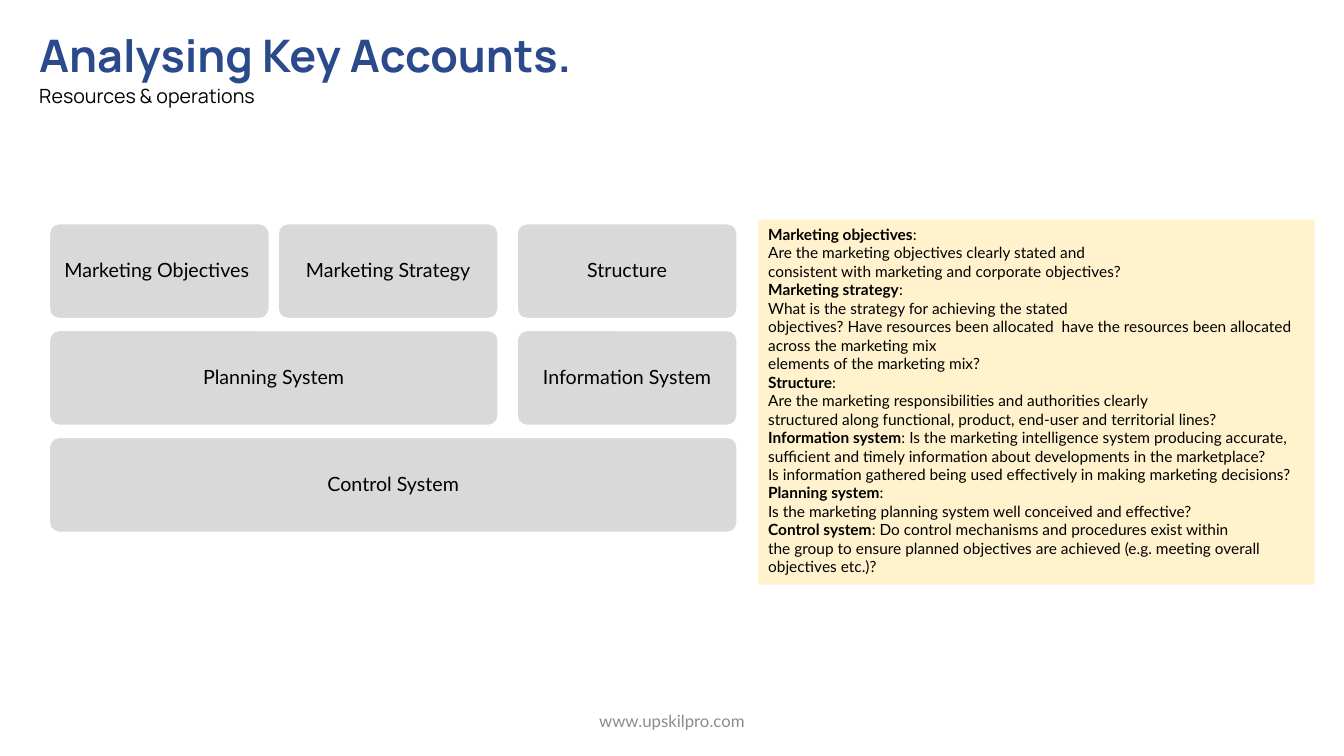
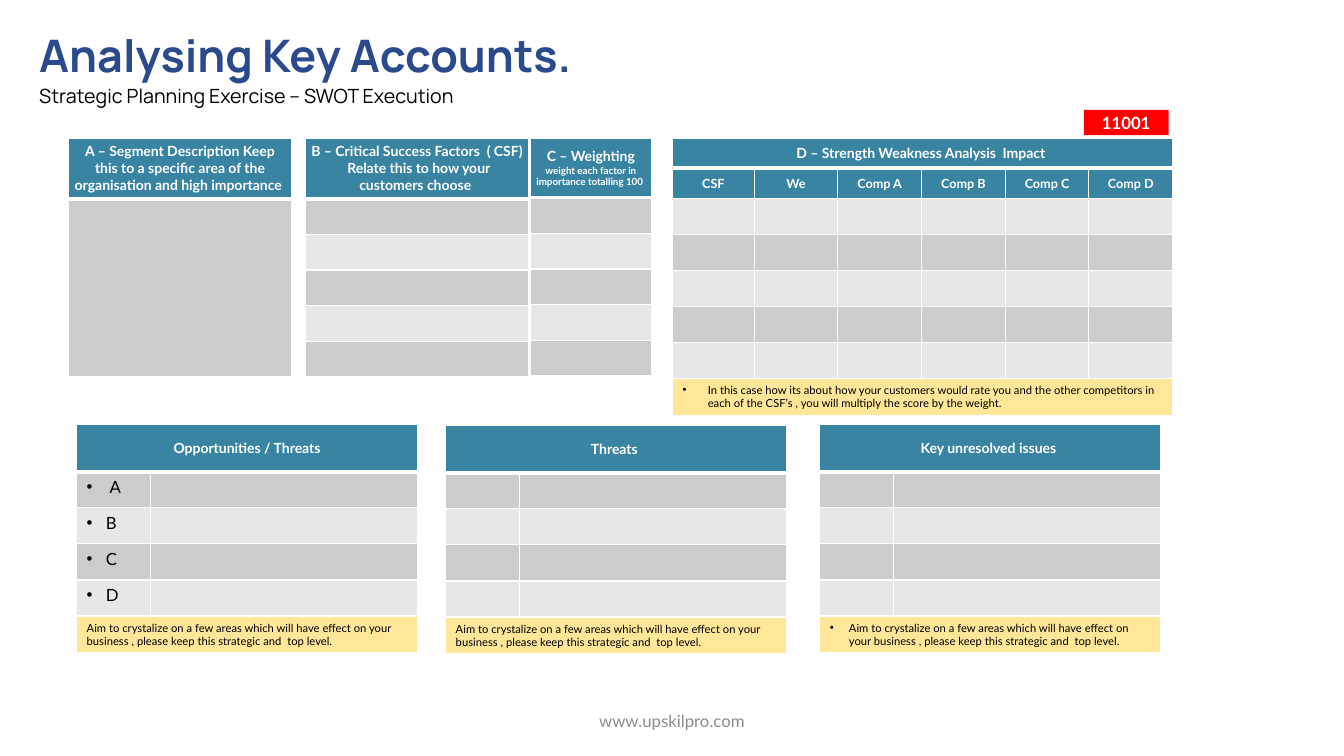
from dataclasses import dataclass

from lxml import etree
from pptx import Presentation
from pptx.dml.color import RGBColor
from pptx.enum.shapes import MSO_SHAPE
from pptx.enum.text import MSO_ANCHOR, PP_ALIGN
from pptx.oxml.ns import qn
from pptx.util import Inches, Pt

RECT, ROUNDED = MSO_SHAPE.RECTANGLE, MSO_SHAPE.ROUNDED_RECTANGLE
LEFT, CENTER = PP_ALIGN.LEFT, PP_ALIGN.CENTER
TOP, MIDDLE = MSO_ANCHOR.TOP, MSO_ANCHOR.MIDDLE

# Shared style
BODY_FONT, TITLE_FONT = "Lato", "Manrope"
BLACK, WHITE, BLUE, FOOTER_GREY = "000000", "FFFFFF", "2A4A8B", "8C8C8C"
TEAL, DARK, PALE, NOTE, RED = "3984A3", "CCCCCC", "E7E7E7", "FFE699", "FF0000"
BOX_GREY, CREAM = "D9D9D9", "FFF2CC"
SLIDE_W, SLIDE_H = 13.33, 7.5

# Grid of the building blocks on the first slide
COL_X = (0.49, 2.76, 5.13)
COL_W = 2.18
ROW_Y, ROW_PITCH, ROW_H = 2.22, 1.06, 0.94


@dataclass(frozen=True)
class Block:
    text: str
    row: int
    col: int
    span: int = 1


@dataclass(frozen=True)
class Panel:
    title: str
    x: float
    y: float
    cols: tuple
    height: float
    head_h: float
    rows: int
    subtitle: str = ""
    heads: tuple = ()
    labels: tuple = ()
    note: str = ""
    note_indent: float = 0
    inset: float = 0.1
    fills: tuple = (DARK, PALE)


BLOCKS = (
    Block("Marketing Objectives ", 0, 0),
    Block("Marketing Strategy", 0, 1),
    Block("Structure", 0, 2),
    Block("Planning System", 1, 0, 2),
    Block("Information System", 1, 2),
    Block("Control System", 2, 0, 3),
)

# Bold lead and plain remainder of each paragraph
QUESTIONS = (
    ("Marketing objectives", ":"),
    ("", "Are the marketing objectives clearly stated and"),
    ("", "consistent with marketing and corporate objectives?"),
    ("Marketing strategy", ":"),
    ("", "What is the strategy for achieving the stated"),
    ("", "objectives? Have resources been allocated  have the resources been "
         "allocated across the marketing mix"),
    ("", "elements of the marketing mix?"),
    ("Structure", ":"),
    ("", "Are the marketing responsibilities and authorities clearly"),
    ("", "structured along functional, product, end-user and territorial lines?"),
    ("Information system", ": Is the marketing intelligence system producing "
     "accurate, sufficient and timely information about developments in the "
     "marketplace?"),
    ("", "Is information gathered being used effectively in making marketing "
         "decisions?"),
    ("Planning system", ":"),
    ("", "Is the marketing planning system well conceived and effective?"),
    ("Control system", ": Do control mechanisms and procedures exist within"),
    ("", "the group to ensure planned objectives are achieved (e.g. meeting "
         "overall"),
    ("", "objectives etc.)?"),
)

AIM = ("Aim to crystalize on a few areas which will have effect on your "
       "business , please keep this strategic and  top level.")
UPPER = dict(y=1.37, head_h=0.6, rows=5)
LOWER = dict(cols=(0.73, 2.65), height=2.26, head_h=0.47, rows=4, note=AIM)
PANELS = (
    Panel("D – Strength Weakness Analysis  Impact ", 6.67, 1.37,
          (0.81,) + (0.83,) * 5, 2.74, 0.3, 5,
          heads=("CSF", "We", "Comp A", "Comp B", "Comp C", "Comp D"),
          note="In this case how its about how your customers would rate you "
               "and the other competitors in each of the CSF’s , you will "
               "multiply the score by the weight.",
          note_indent=0.25, fills=(PALE, DARK)),
    Panel("B – Critical Success Factors  ( CSF)  Relate this to how your "
          "customers choose ", 3.03, cols=(2.21,), height=2.37, inset=0.05,
          **UPPER),
    Panel("A – Segment Description Keep this to a specific area of the "
          "organisation and high importance ", 0.68, cols=(2.21,), height=2.37,
          inset=0.05, **{**UPPER, "rows": 1}),
    Panel("C – Weighting ", 5.26, cols=(1.2,), height=2.36, inset=0.05,
          subtitle="weight each factor in importance totalling 100 ",
          **{**UPPER, "head_h": 0.59}),
    Panel("Opportunities / Threats", 0.76, 4.21, labels=(" A", "B", "C", "D"),
          **LOWER),
    Panel("Threats ", 4.42, 4.22, **LOWER),
    Panel("Key unresolved issues ", 8.13, 4.21, note_indent=0.19, **LOWER),
)


def rgb(color: str) -> RGBColor:
    return RGBColor.from_string(color)


def add_run(p, text: str, *, size: float, color: str = BLACK,
            bold: bool = False, font: str = BODY_FONT, align=LEFT,
            bullet: float = 0) -> None:
    """Append formatted text; bullet is the hanging indent in inches."""
    p.alignment = align
    if bullet:
        pPr = p._p.get_or_add_pPr()
        pPr.set("marL", str(Inches(bullet)))
        pPr.set("indent", str(-Inches(bullet)))
        etree.SubElement(pPr, qn("a:buFont"), typeface="Arial")
        etree.SubElement(pPr, qn("a:buChar"), char="•")
    r = p.add_run()
    r.text = text
    r.font.name, r.font.size, r.font.bold = font, Pt(size), bold
    r.font.color.rgb = rgb(color)


def add_textbox(slide, x: float, y: float, w: float, h: float, anchor=TOP):
    tf = slide.shapes.add_textbox(*map(Inches, (x, y, w, h))).text_frame
    tf.word_wrap, tf.vertical_anchor = True, anchor
    return tf


def add_box(slide, kind, x: float, y: float, w: float, h: float, fill: str,
            line: str = "", anchor=MIDDLE):
    sp = slide.shapes.add_shape(kind, *map(Inches, (x, y, w, h)))
    sp.shadow.inherit = False
    sp.fill.solid()
    sp.fill.fore_color.rgb = rgb(fill)
    if line:
        sp.line.color.rgb = rgb(line)
        sp.line.width = Pt(1)
    else:
        sp.line.fill.background()
    sp.text_frame.word_wrap = True
    sp.text_frame.vertical_anchor = anchor
    return sp


def add_slide(prs, subtitle: str):
    """Blank slide with the shared title and footer."""
    slide = prs.slides.add_slide(prs.slide_layouts[6])
    tf = add_textbox(slide, (SLIDE_W - 4.5) / 2, 6.95, 4.5, 0.4, MIDDLE)
    add_run(tf.paragraphs[0], "www.upskilpro.com", size=12, color=FOOTER_GREY,
            align=CENTER)
    tf = add_textbox(slide, 0.29, 0.23, 7.01, 0.88)
    add_run(tf.paragraphs[0], "Analysing Key Accounts.", size=32, color=BLUE,
            bold=True, font=TITLE_FONT)
    p = tf.add_paragraph()
    p.line_spacing, p.space_after = 1.07, Pt(8)
    add_run(p, subtitle, size=14, font=TITLE_FONT)
    return slide


def add_block(slide, block: Block) -> None:
    x = COL_X[block.col]
    w = COL_X[block.col + block.span - 1] + COL_W - x
    sp = add_box(slide, ROUNDED, x, ROW_Y + block.row * ROW_PITCH, w, ROW_H,
                 BOX_GREY, WHITE)
    sp.adjustments[0] = 0.1
    tf = sp.text_frame
    tf.margin_left = tf.margin_right = Inches(0.06)
    p = tf.paragraphs[0]
    p.line_spacing = 0.9
    add_run(p, block.text, size=14, align=CENTER)


def set_borders(cell, **widths: float) -> None:
    tcPr = cell._tc.get_or_add_tcPr()
    for i, (side, width) in enumerate(widths.items()):
        ln = etree.Element(qn(f"a:ln{side}"), w=str(Pt(width)))
        solid = etree.SubElement(ln, qn("a:solidFill"))
        etree.SubElement(solid, qn("a:srgbClr"), val=WHITE)
        tcPr.insert(i, ln)


def add_panel(slide, panel: Panel) -> None:
    head_rows = 2 if panel.heads else 1
    body_rows = panel.rows + bool(panel.note)
    n_rows = head_rows + body_rows
    table = slide.shapes.add_table(
        n_rows, len(panel.cols),
        *map(Inches, (panel.x, panel.y, sum(panel.cols), panel.height))).table
    table.first_row = table.horz_banding = False
    for column, w in zip(table.columns, panel.cols):
        column.width = Inches(w)
    body_h = (panel.height - head_rows * panel.head_h) / body_rows
    last = n_rows - 1

    # Fills and borders by row
    for i, row in enumerate(table.rows):
        is_head = i < head_rows
        row.height = Inches(panel.head_h if is_head else body_h)
        fill = TEAL if is_head else panel.fills[(i - head_rows) % 2]
        if panel.note and i == last:
            fill = NOTE
        for cell in row.cells:
            cell.fill.solid()
            cell.fill.fore_color.rgb = rgb(fill)
            cell.vertical_anchor = MIDDLE if is_head else TOP
            set_borders(cell, L=1, R=1, T=3 if i == 1 else 1,
                        B=3 if i == 0 else 1)

    # Header, column heads, labels and note
    title = table.cell(0, 0)
    title.margin_left = title.margin_right = Inches(panel.inset)
    head = dict(color=WHITE, bold=True, align=CENTER)
    add_run(title.text_frame.paragraphs[0], panel.title, size=10, **head)
    if panel.subtitle:
        add_run(title.text_frame.paragraphs[0], panel.subtitle, size=7, **head)
    for j, text in enumerate(panel.heads):
        add_run(table.cell(1, j).text_frame.paragraphs[0], text, size=9, **head)
    for i, text in enumerate(panel.labels, head_rows):
        add_run(table.cell(i, 0).text_frame.paragraphs[0], text, size=12,
                bullet=0.19)
    if panel.note:
        add_run(table.cell(last, 0).text_frame.paragraphs[0], panel.note,
                size=8, bullet=panel.note_indent)

    # Small type in empty cells keeps the rows at their height
    for cell in table.iter_cells():
        if not cell.text:
            etree.SubElement(cell.text_frame.paragraphs[0]._p,
                             qn("a:endParaRPr"), sz="800")
    if len(panel.cols) > 1:
        for i in (0, last):
            table.cell(i, 0).merge(table.cell(i, len(panel.cols) - 1))


def build_resources(prs) -> None:
    slide = add_slide(prs, "Resources & operations")
    for block in BLOCKS:
        add_block(slide, block)
    tf = add_box(slide, RECT, 7.52, 2.18, 5.52, 3.62, CREAM,
                 anchor=TOP).text_frame
    for i, (lead, rest) in enumerate(QUESTIONS):
        p = tf.add_paragraph() if i else tf.paragraphs[0]
        if lead:
            add_run(p, lead, size=11, bold=True)
        add_run(p, rest, size=11)


def build_swot(prs) -> None:
    slide = add_slide(prs, "Strategic Planning Exercise – SWOT Execution")
    for panel in PANELS:
        add_panel(slide, panel)
    sp = add_box(slide, RECT, 10.75, 1.09, 0.84, 0.25, RED)
    add_run(sp.text_frame.paragraphs[0], "11001", size=12, color=WHITE,
            bold=True, align=CENTER)


def main() -> None:
    prs = Presentation()
    prs.slide_width, prs.slide_height = Inches(SLIDE_W), Inches(SLIDE_H)
    build_resources(prs)
    build_swot(prs)
    prs.save("out.pptx")


if __name__ == "__main__":
    main()
